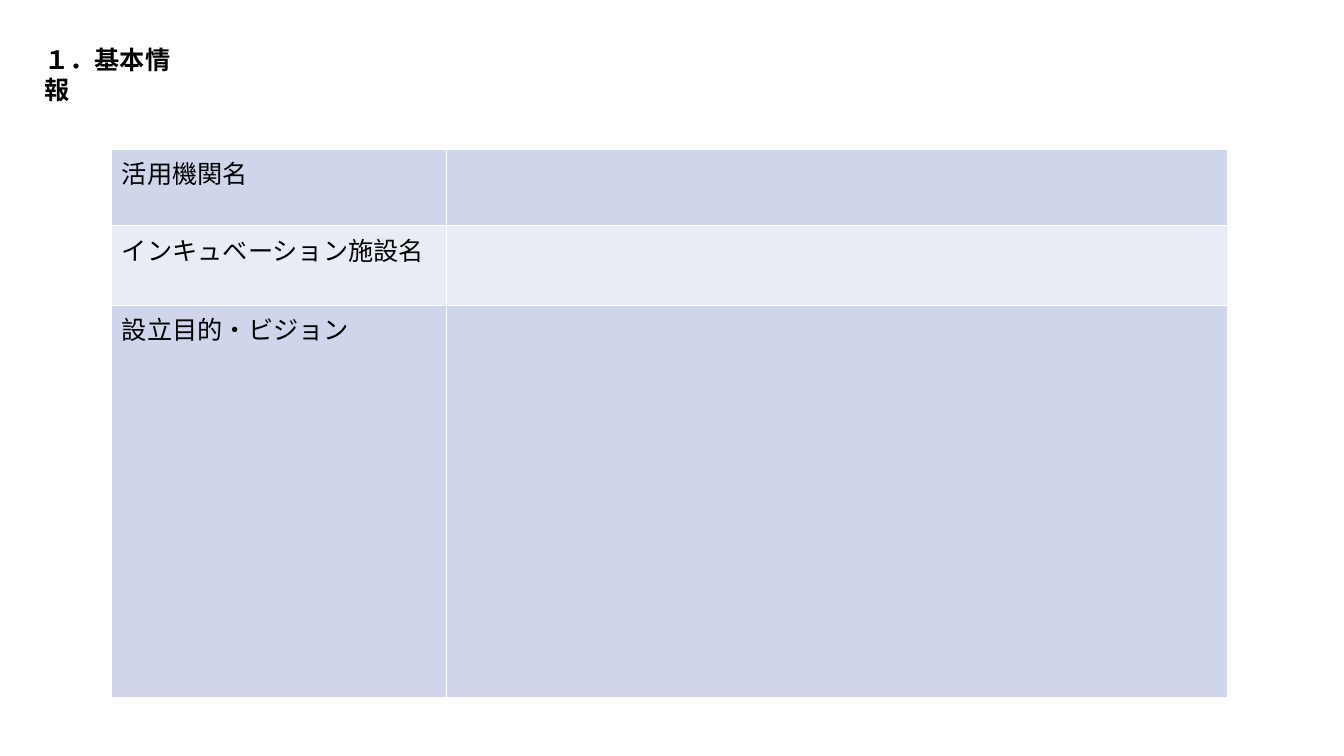
from dataclasses import dataclass

from lxml import etree
from pptx import Presentation
from pptx import util as u
from pptx.dml.color import RGBColor
from pptx.enum import text
from pptx.oxml.ns import qn


@dataclass(frozen=True)
class Theme:
    heading_font: str = "Arial"
    body_font: str = "Noto Sans CJK JP"
    size: u.Pt = u.Pt(18)
    ink: RGBColor = RGBColor(0, 0, 0)
    bands: tuple = (RGBColor(0xCF, 0xD5, 0xEA), RGBColor(0xE9, 0xEB, 0xF5))


THEME = Theme()
COLUMN_WIDTHS = (3.32, 7.75)
FORM_ROWS = (
    ("活用機関名", 0.76),
    ("インキュベーション施設名", 0.79),
    ("設立目的・ビジョン", 3.89),
)


def format_runs(paragraph, font_name, bold=False):
    for run in paragraph.runs:
        run.font.name = font_name
        run.font.size = THEME.size
        run.font.bold = bold
        run.font.color.rgb = THEME.ink


def set_east_asian_font(paragraph, font_name):
    for run in paragraph.runs:
        properties = run.font._element
        east_asian = etree.SubElement(properties, qn("a:ea"))
        east_asian.set("typeface", font_name)


def add_heading(slide, wording, left, top, width, height):
    box = slide.shapes.add_textbox(*map(u.Inches, (left, top, width, height)))
    frame = box.text_frame
    frame.text = wording
    frame.word_wrap = True
    frame.auto_size = text.MSO_AUTO_SIZE.SHAPE_TO_FIT_TEXT
    format_runs(frame.paragraphs[0], THEME.heading_font, bold=True)


def add_form_table(slide, left, top):
    """Add the form: labels in the first column, empty answers in the second."""
    width = sum(COLUMN_WIDTHS)
    height = sum(row_height for _, row_height in FORM_ROWS)
    frame = slide.shapes.add_table(
        len(FORM_ROWS), len(COLUMN_WIDTHS),
        *map(u.Inches, (left, top, width, height)))
    table = frame.table
    table.first_row = False
    for column, column_width in zip(table.columns, COLUMN_WIDTHS):
        column.width = u.Inches(column_width)
    for index, (label, row_height) in enumerate(FORM_ROWS):
        row = table.rows[index]
        row.height = u.Inches(row_height)
        for cell in row.cells:
            cell.fill.solid()
            cell.fill.fore_color.rgb = THEME.bands[index % len(THEME.bands)]
        label_cell = table.cell(index, 0)
        label_cell.text = label
        paragraph = label_cell.text_frame.paragraphs[0]
        format_runs(paragraph, THEME.body_font)
        set_east_asian_font(paragraph, THEME.body_font)


def main():
    presentation = Presentation()
    presentation.slide_width = u.Inches(13.33)
    presentation.slide_height = u.Inches(7.5)
    slide = presentation.slides.add_slide(presentation.slide_layouts[6])
    add_heading(slide, "１．基本情報", 0.34, 0.39, 1.69, 0.4)
    add_form_table(slide, 1.11, 1.48)
    presentation.save("out.pptx")


if __name__ == "__main__":
    main()
